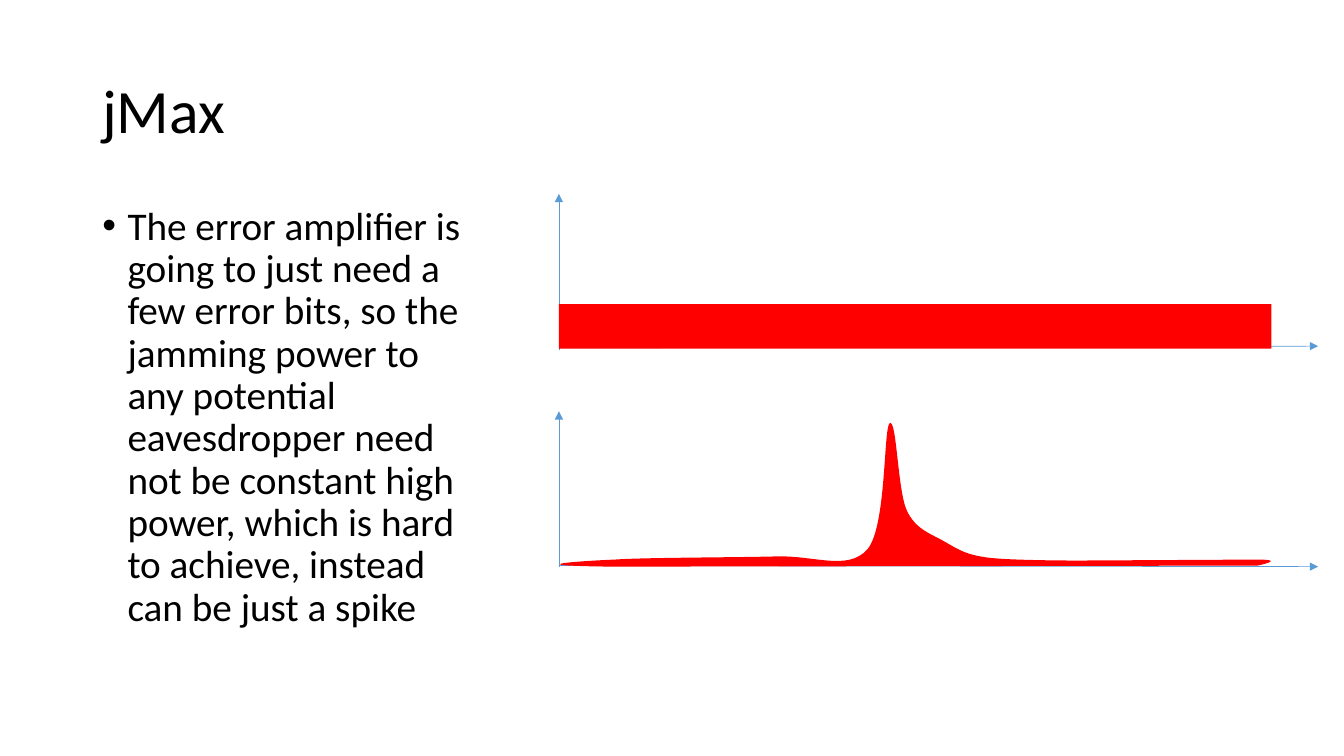
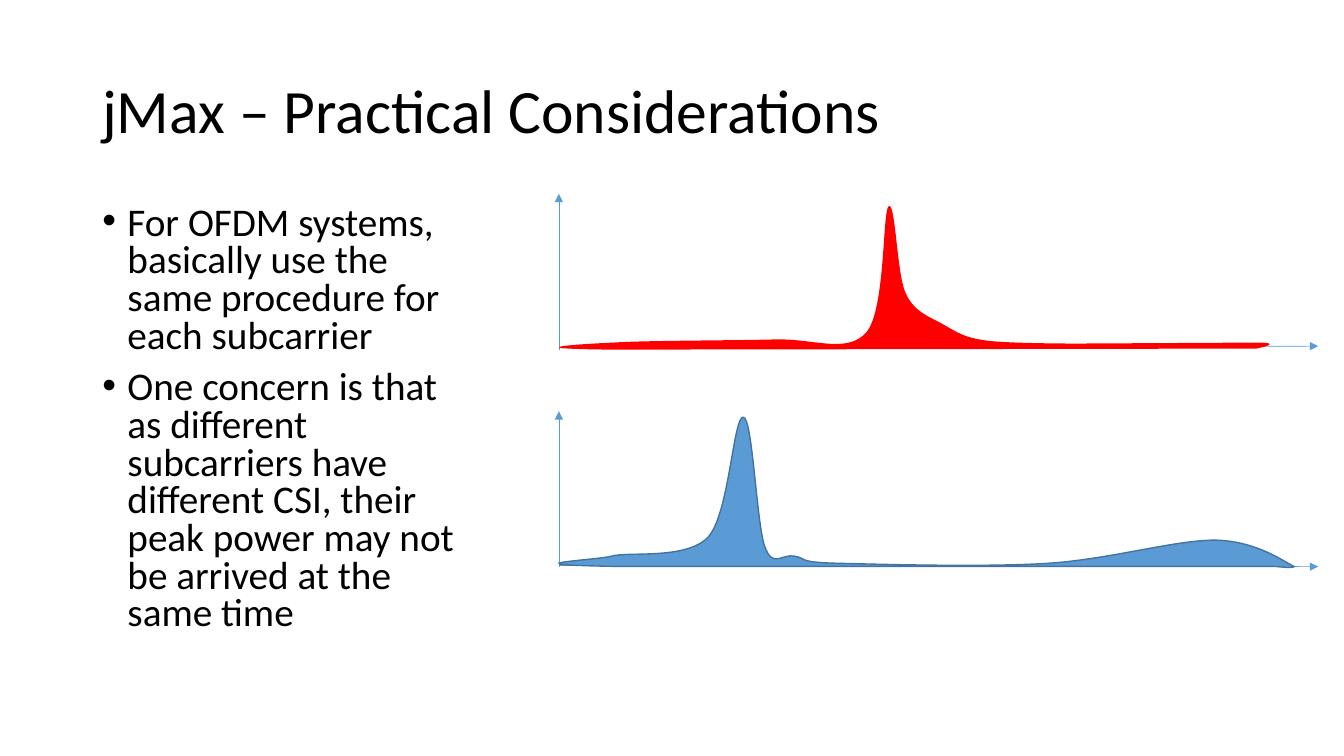
from lxml import etree
from pptx import Presentation, util as u
from pptx.dml.color import RGBColor
from pptx.enum import shapes, text
from pptx.oxml.ns import qn

PX = 3175
COLORS = {"ink": "000000", "axis": "5B9BD5", "jam": "FF0000",
          "carrier": "5B9BD5", "carrier_edge": "43739E"}
FONT = "Calibri"
AXIS_LEFT, AXIS_RIGHT = 1597, 3766
AXES = [{"start": 994, "end": 989, "base": 999, "top": 554},
        {"start": 1616, "end": 1619, "base": 1619, "top": 1175}]

SPIKE = {
    "origin": (556, 419),
    "size": (706, 143),
    "segments": [
        (611, 555),
        (637, 553, 725, 553, 767, 552),
        (808, 550, 841, 567, 861, 545),
        (880, 523, 877, 426, 883, 420),
        (890, 413, 891, 486, 900, 506),
        (909, 526, 926, 530, 939, 538),
        (953, 546, 959, 550, 980, 553),
        (1002, 556, 1070, 556, 1070, 556),
        (1248, 555),
        (1278, 555, 1248, 561, 1248, 561),
        (609, 562),
        (503, 561, 584, 556, 611, 555),
    ],
}
SUBCARRIER = {
    "origin": (555, 414),
    "size": (729, 149),
    "segments": [
        (607, 552),
        (623, 547, 681, 556, 703, 533),
        (724, 510, 728, 412, 738, 414),
        (747, 415, 751, 519, 759, 542),
        (767, 565, 776, 549, 789, 552),
        (801, 554, 790, 558, 832, 559),
        (874, 560, 977, 563, 1040, 559),
        (1102, 555, 1165, 536, 1206, 536),
        (1246, 537, 1272, 556, 1282, 561),
        (1292, 565, 1264, 562, 1264, 562),
        (607, 562),
        (498, 560, 591, 556, 607, 552),
    ],
}


def emu(px):
    return px * PX


def rgb(name):
    return RGBColor.from_string(COLORS[name])


def add_text(slide, box, paragraphs, size=28, spacing=0.9, bullet=None,
             anchor=text.MSO_ANCHOR.TOP, color="ink"):
    frame = slide.shapes.add_textbox(*map(emu, box)).text_frame
    frame.word_wrap = True
    frame.vertical_anchor = anchor
    for index, wording in enumerate(paragraphs):
        paragraph = frame.add_paragraph() if index else frame.paragraphs[0]
        paragraph.text = wording
        paragraph.line_spacing = spacing
        paragraph.space_before = u.Pt(10 if index else 0)
        if bullet:
            props = paragraph._p.get_or_add_pPr()
            props.set("marL", str(emu(72)))
            props.set("indent", str(-emu(72)))
            etree.SubElement(props, qn("a:buFont")).set("typeface", "Arial")
            etree.SubElement(props, qn("a:buChar")).set("char", bullet)
        font = paragraph.font
        font.name, font.size = FONT, u.Pt(size)
        font.color.rgb = rgb(color)


def add_arrow(slide, start, end):
    arrow = slide.shapes.add_connector(
        shapes.MSO_CONNECTOR.STRAIGHT, *map(emu, start + end))
    arrow.line.color.rgb = rgb("axis")
    arrow.line.width = u.Pt(0.5)
    line = arrow.line._get_or_add_ln()
    etree.SubElement(line, qn("a:tailEnd")).set("type", "triangle")
    etree.SubElement(arrow._element.spPr, qn("a:effectLst"))


def add_axes(slide, start, end, base, top):
    add_arrow(slide, (AXIS_LEFT, start), (AXIS_RIGHT, end))
    add_arrow(slide, (AXIS_LEFT, base), (AXIS_LEFT, top))


def paint(area, fill, edge=None):
    area.shadow.inherit = False
    area.fill.solid()
    area.fill.fore_color.rgb = rgb(fill)
    if edge:
        area.line.color.rgb = rgb(edge)
        area.line.width = u.Pt(1)
    else:
        area.line.fill.background()


def add_band(slide, box, fill):
    band = slide.shapes.add_shape(shapes.MSO_SHAPE.RECTANGLE, *map(emu, box))
    paint(band, fill)


def draw_curve(outline, origin, segments):
    for step in list(outline):
        outline.remove(step)
    for index, segment in enumerate(segments):
        tag = "a:cubicBezTo" if len(segment) == 6 else "a:lnTo"
        step = etree.SubElement(outline, qn(tag if index else "a:moveTo"))
        for x, y in zip(segment[::2], segment[1::2]):
            point = etree.SubElement(step, qn("a:pt"))
            point.set("x", str(x - origin[0]))
            point.set("y", str(y - origin[1]))
    etree.SubElement(outline, qn("a:close"))


def add_spectrum(slide, box, curve, fill, edge=None):
    left, top, width, height = map(emu, box)
    across, down = curve["size"]
    builder = slide.shapes.build_freeform(
        0, 0, scale=(width / across, height / down))
    builder.add_line_segments([(across, 0), (across, down)], close=True)
    spectrum = builder.convert_to_shape(left, top)
    outline = spectrum._element.spPr.find(".//" + qn("a:path"))
    draw_curve(outline, curve["origin"], curve["segments"])
    paint(spectrum, fill, edge)


def add_slide(deck, title, bullets, spacing, width):
    slide = deck.slides.add_slide(deck.slide_layouts[6])
    add_text(slide, (264, 115, 3312, 417), [title], size=44,
             anchor=text.MSO_ANCHOR.MIDDLE)
    add_text(slide, (264, 575, width, 1371), bullets, spacing=spacing,
             bullet="•")
    for axes in AXES:
        add_axes(slide, **axes)
    return slide


def main():
    deck = Presentation()
    deck.slide_width, deck.slide_height = emu(3840), emu(2160)

    power = add_slide(deck, "jMax", [
        "The error amplifier is going to just need a few error bits, so the "
        "jamming power to any potential eavesdropper need not be constant high "
        "power, which is hard to achieve, instead can be just a spike",
    ], spacing=0.9, width=1097)
    add_band(power, (AXIS_LEFT, 869, 2036, 127), "jam")
    add_spectrum(power, (1600, 1207, 2033, 412), SPIKE, "jam")

    practice = add_slide(deck, "jMax – Practical Considerations", [
        "For OFDM systems, basically use the same procedure for each subcarrier",
        "One concern is that as different subcarriers have different CSI, their "
        "peak power may not be arrived at the same time",
    ], spacing=0.8, width=1106)
    add_spectrum(practice, (AXIS_LEFT, 587, 2033, 412), SPIKE, "jam")
    add_spectrum(practice, (AXIS_LEFT, 1192, 2100, 429), SUBCARRIER, "carrier",
                 edge="carrier_edge")

    deck.save("out.pptx")


if __name__ == "__main__":
    main()
